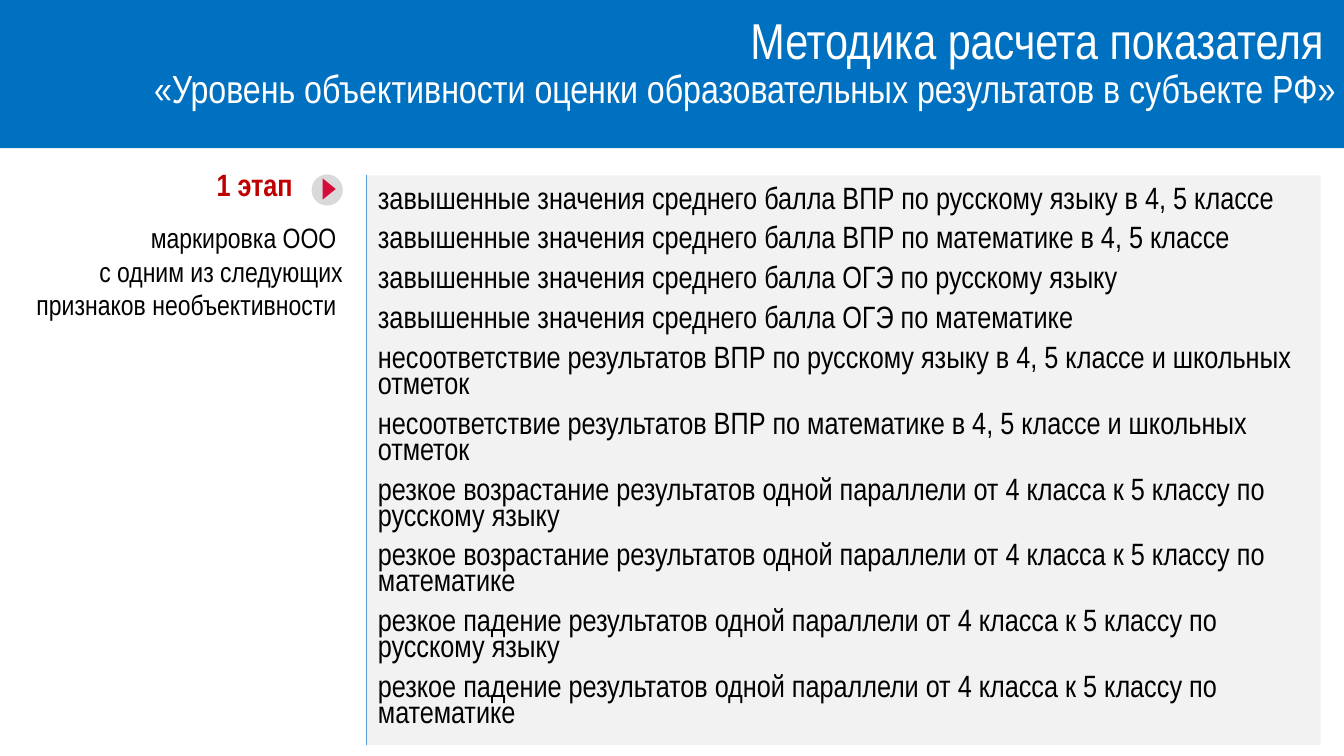
from pptx import Presentation
from pptx.dml.color import RGBColor
from pptx.enum.shapes import MSO_CONNECTOR, MSO_SHAPE
from pptx.enum.text import MSO_ANCHOR, PP_ALIGN
from pptx.oxml.ns import qn
from pptx.util import Inches, Pt
from lxml import etree

RECT, OVAL, TRI = MSO_SHAPE.RECTANGLE, MSO_SHAPE.OVAL, MSO_SHAPE.ISOSCELES_TRIANGLE
LINE = MSO_CONNECTOR.STRAIGHT
LEFT, RIGHT = PP_ALIGN.LEFT, PP_ALIGN.RIGHT
TOP, MIDDLE = MSO_ANCHOR.TOP, MSO_ANCHOR.MIDDLE

COLORS = {
    "white": "FFFFFF", "black": "000000", "blue": "0070C0", "rule": "5B9BD5",
    "panel": "F2F2F2", "disc": "D9D9D9", "arrow": "D60B39", "red": "C00000",
}

TITLE = [
    ("Методика расчета показателя ", 36),
    ("«Уровень объективности оценки образовательных результатов в субъекте РФ»", 28),
]
STAGE = ["маркировка ООО ", "с одним из следующих признаков необъективности "]
SUBJECTS = ["русскому языку", "математике"]
SIGNS = [
    "завышенные значения среднего балла ВПР по {} в 4, 5 классе",
    "завышенные значения среднего балла ОГЭ по {}",
    "несоответствие результатов ВПР по {} в 4, 5 классе и школьных отметок",
    "резкое возрастание результатов одной параллели от 4 класса к 5 классу по {}",
    "резкое падение результатов одной параллели от 4 класса к 5 классу по {}",
]


class Page:
    font = "Arial Narrow"

    def __init__(self, slide):
        self.shapes = slide.shapes

    def color(self, name):
        return RGBColor.from_string(COLORS[name])

    def shape(self, kind, box, fill, turn=0):
        shape = self.shapes.add_shape(kind, *map(Inches, box))
        shape.shadow.inherit = False
        shape.fill.solid()
        shape.fill.fore_color.rgb = self.color(fill)
        shape.line.fill.background()
        shape.rotation = turn

    def line(self, start, end, color, width):
        line = self.shapes.add_connector(LINE, *map(Inches, start + end))
        line.line.color.rgb = self.color(color)
        line.line.width = Pt(width)
        etree.SubElement(line._element.spPr, qn("a:effectLst"))

    def text(self, box, paras, size, color="black", align=LEFT, anchor=TOP,
             bold=False, wrap=True, spacing=None, before=0):
        frame = self.shapes.add_textbox(*map(Inches, box)).text_frame
        frame.word_wrap = wrap
        frame.vertical_anchor = anchor
        for i, words in enumerate(paras):
            para = frame.paragraphs[0] if i == 0 else frame.add_paragraph()
            para.alignment = align
            para.line_spacing = spacing
            para.space_before = Pt(before)
            para.font.name = self.font
            para.font.size = Pt(size)
            para.font.bold = bold
            para.font.color.rgb = self.color(color)
            if isinstance(words, str):
                para.text = words
                continue
            for j, (part, points) in enumerate(words):
                if j:
                    para.add_line_break()
                run = para.add_run()
                run.text = part
                run.font.size = Pt(points)


def main():
    deck = Presentation()
    deck.slide_width, deck.slide_height = Inches(13.33), Inches(7.5)
    page = Page(deck.slides.add_slide(deck.slide_layouts[6]))

    page.shape(RECT, (3.63, 1.74, 9.47, 5.65), "panel")
    page.line((3.63, 1.74), (3.63, 7.39), "rule", 0.5)
    page.shape(RECT, (0, 0, 13.33, 1.47), "blue")
    page.text((0.92, -0.09, 12.42, 1.45), [TITLE], 28, "white", RIGHT, MIDDLE,
              spacing=0.9)
    signs = [sign.format(subject) for sign in SIGNS for subject in SUBJECTS]
    page.text((3.65, 1.82, 9.35, 5.59), signs, 22, spacing=0.7, before=10)

    page.shape(OVAL, (3.09, 1.73, 0.31, 0.31), "disc")
    page.shape(TRI, (3.16, 1.81, 0.21, 0.13), "arrow", turn=90)
    page.text((-0.06, 2.14, 3.56, 1.11), STAGE, 20, align=RIGHT)
    page.text((2.05, 1.6, 1.04, 0.47), ["1 этап"], 22, "red", bold=True, wrap=False)

    deck.save("out.pptx")


if __name__ == "__main__":
    main()
